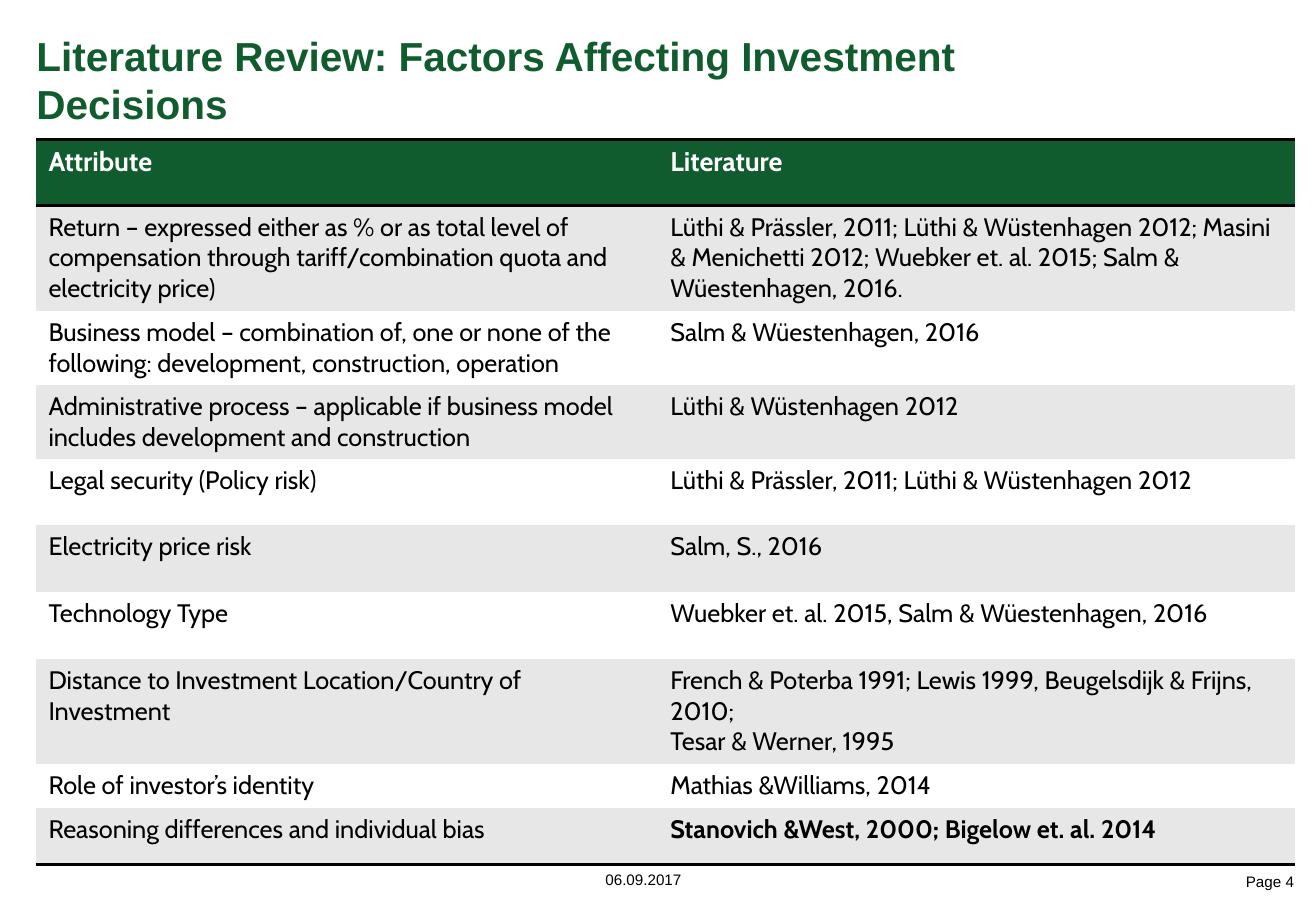
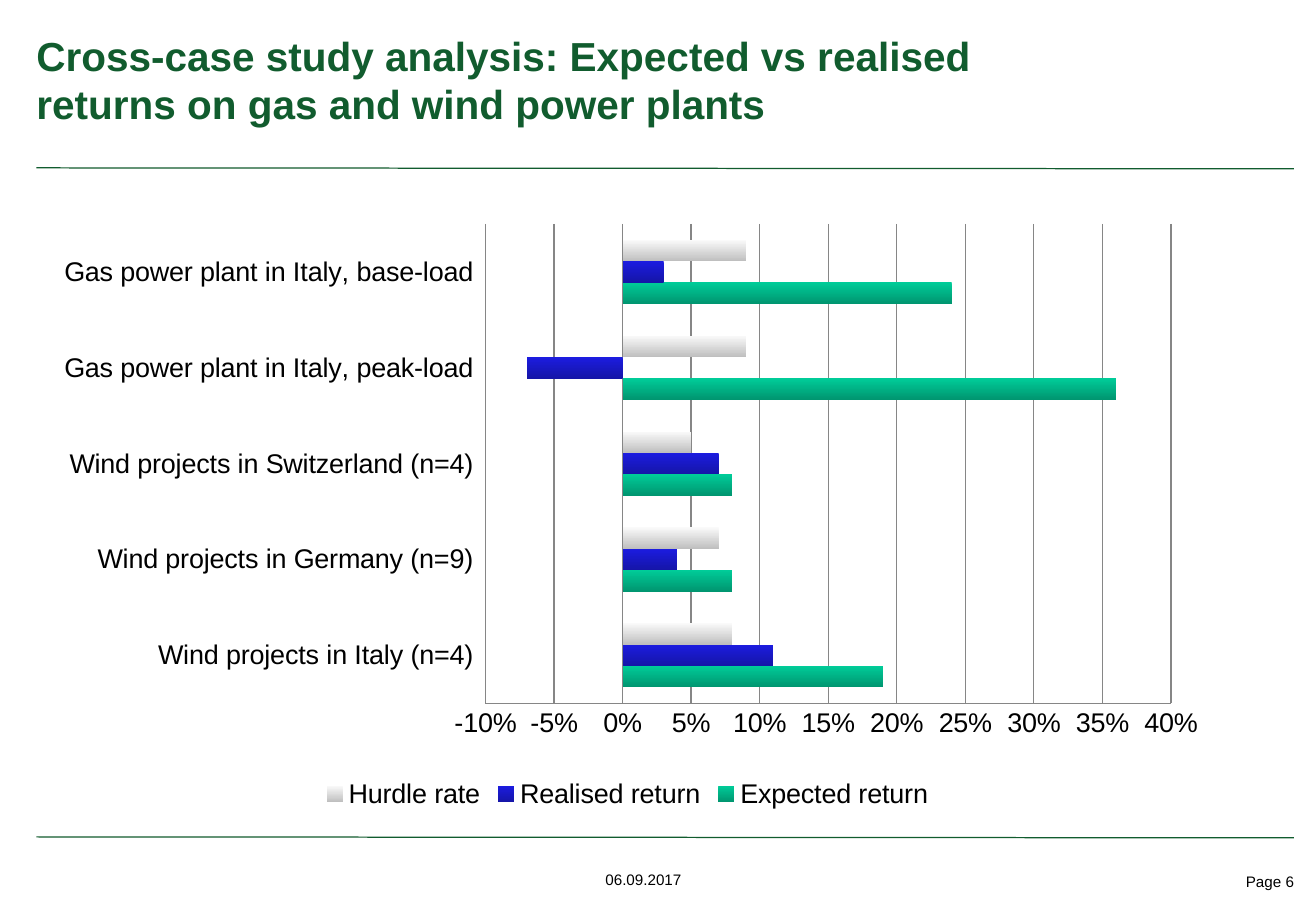
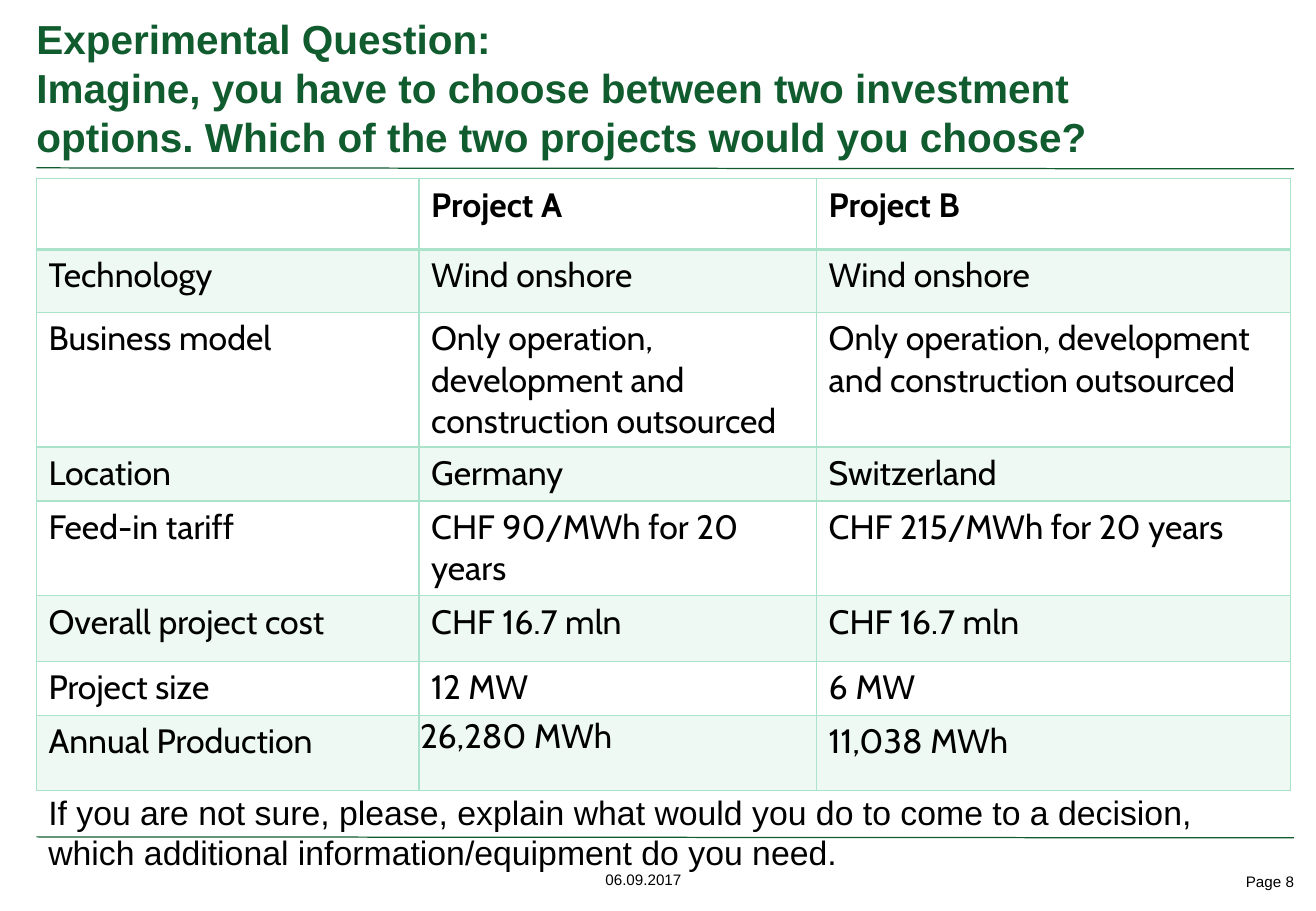
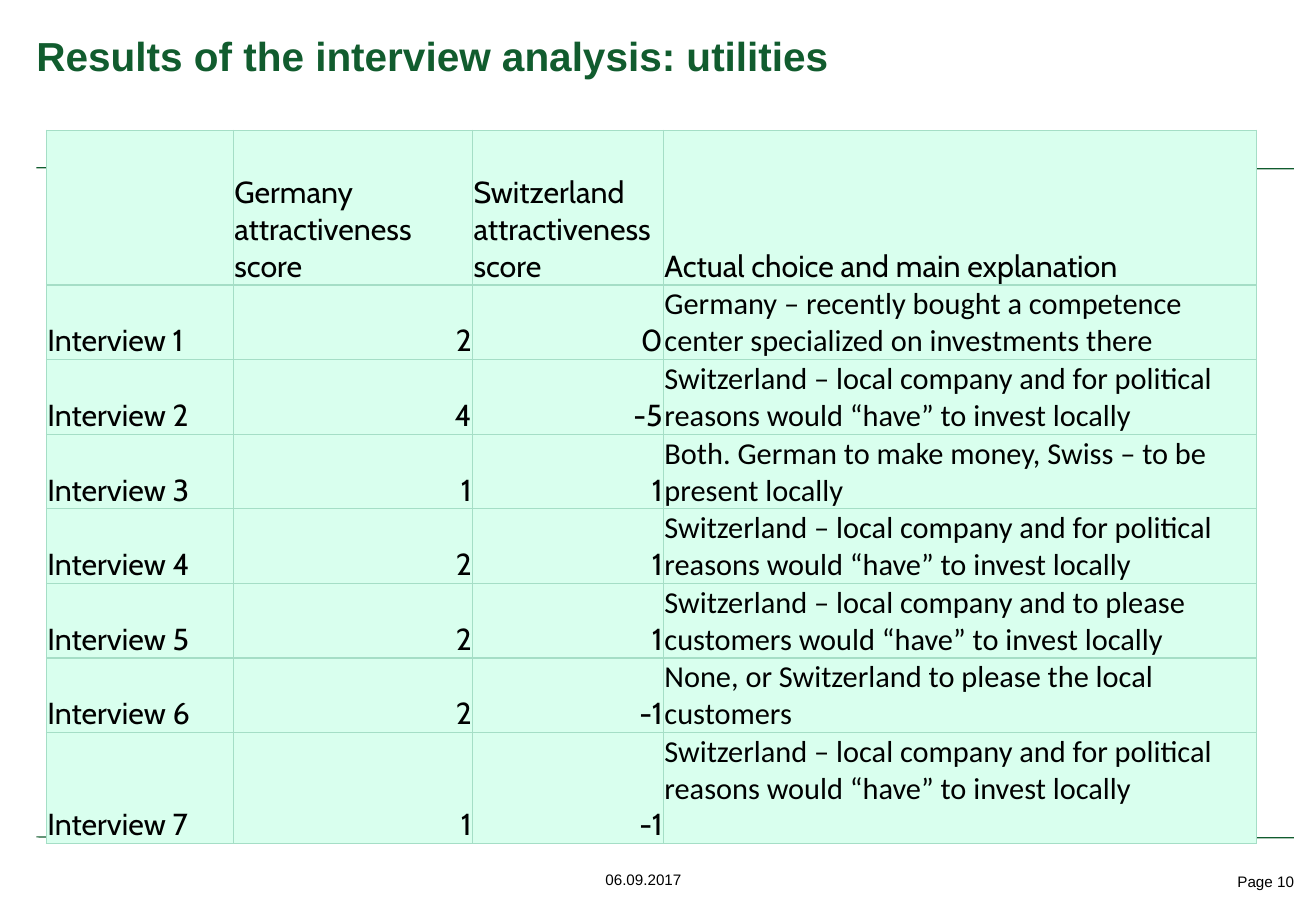
"""Build four slides on factors and returns in energy investment decisions."""
from lxml import etree
from pptx import Presentation
from pptx import util as u
from pptx.chart import data
from pptx.dml import color as dml
from pptx.enum import chart as charts, shapes, text
from pptx.oxml import ns

COLORS = {
    "green": "115C2E", "black": "000000", "white": "FFFFFF", "band": "E7E7E7",
    "mint": "AAE2CA", "pale": "D9FFEE", "rule": "A5DEC6", "grid": "868686",
}
PLAIN_TABLE = "{2D5ABB26-0587-4C30-8999-92F81FD0307C}"
Cm = u.Cm


def write(paragraph, words, size, font="Arial", color="black", bold=False):
    for index, line in enumerate(words.split("\n")):
        if index:
            paragraph.add_line_break()
        run = paragraph.add_run()
        run.text = line
        run.font.size = u.Pt(size)
        run.font.name = font
        run.font.bold = bold
        run.font.color.rgb = dml.RGBColor.from_string(COLORS[color])


def paint(cell, fill, borders, margins=None):
    properties = cell._tc.get_or_add_tcPr()
    for side in "LRTB":
        if side in borders:
            color, width = borders[side]
            line = etree.SubElement(properties, ns.qn("a:ln" + side), w=str(u.Pt(width)))
            solid = etree.SubElement(line, ns.qn("a:solidFill"))
            etree.SubElement(solid, ns.qn("a:srgbClr"), val=COLORS[color])
    if fill:
        cell.fill.solid()
        cell.fill.fore_color.rgb = dml.RGBColor.from_string(COLORS[fill])
    else:
        cell.fill.background()
    if margins is not None:
        cell.margin_left = cell.margin_top = cell.margin_right = Cm(margins)
        cell.margin_bottom = 0


presentation = Presentation()
presentation.slide_width = Cm(27.51)
presentation.slide_height = Cm(19.05)
layout = presentation.slide_layouts[5]
for placeholder in list(layout.placeholders):
    if placeholder.placeholder_format.idx:
        placeholder.element.getparent().remove(placeholder.element)
    else:
        placeholder.left, placeholder.top = Cm(0.76), Cm(0.64)
        placeholder.width, placeholder.height = Cm(21.89), Cm(2.29)

slides = []
for page, title in [
    (4, "Literature Review: Factors Affecting Investment Decisions"),
    (6, "Cross-case study analysis: Expected vs realised returns on gas and wind power plants"),
    (8, "Experimental Question:\nImagine, you have to choose between two investment options. "
        "Which of the two projects would you choose?"),
    (10, "Results of the interview analysis: utilities"),
]:
    slide = presentation.slides.add_slide(layout)
    slides.append(slide)
    if page == 4:
        for y in (3.51, 17.5):
            line = slide.shapes.add_connector(
                shapes.MSO_CONNECTOR.STRAIGHT, Cm(0.76), Cm(y), Cm(27.05), Cm(y + 0.02))
            line.line.color.rgb = dml.RGBColor.from_string(COLORS["green"])
            line.line.width = u.Pt(0.75)
            etree.SubElement(line.element.spPr, ns.qn("a:effectLst"))
            layout.shapes.element.append(line.element)
        date = slide.shapes.add_textbox(Cm(10.49), Cm(17.88), Cm(5.92), Cm(1.02))
        date.text_frame.word_wrap = True
        date.text_frame.vertical_anchor = text.MSO_ANCHOR.MIDDLE
        date.text_frame.paragraphs[0].alignment = text.PP_ALIGN.CENTER
        write(date.text_frame.paragraphs[0], "06.09.2017", 9)
        layout.shapes.element.append(date.element)
    number = slide.shapes.add_textbox(Cm(23.72), Cm(18.24), Cm(3.33), Cm(0.38))
    number.text_frame.word_wrap = True
    number.text_frame.paragraphs[0].alignment = text.PP_ALIGN.RIGHT
    write(number.text_frame.paragraphs[0], f"Page {page}", 9)
    heading = slide.shapes.title.text_frame
    heading.auto_size = text.MSO_AUTO_SIZE.NONE
    heading.vertical_anchor = text.MSO_ANCHOR.TOP
    heading.paragraphs[0].alignment = text.PP_ALIGN.LEFT
    write(heading.paragraphs[0], title, 24, color="green", bold=True)
    for frame in (number.text_frame, heading):
        frame.margin_left = frame.margin_top = frame.margin_right = frame.margin_bottom = 0

literature_slide, returns_slide, question_slide, interview_slide = slides
question_title = question_slide.shapes.title
question_title.left, question_title.top = Cm(0.76), Cm(0.3)
question_title.width, question_title.height = Cm(22.5), Cm(3.18)

tables = []
for slide, left, top, widths, heights in [
    (literature_slide, 0.76, 2.92, [13, 13.31],
     [1.38, 2.2, 1.55, 1.55, 1.38, 1.4, 1.4, 2.2, 0.92, 1.19]),
    (question_slide, 0.76, 3.73, [8, 8.31, 9.91],
     [1.48, 1.32, 2.82, 1.13, 1.97, 1.38, 1.13, 1.57]),
    (interview_slide, 0.97, 2.72, [3.91, 5, 3.99, 12.4], [3.24] + [1.56] * 6 + [2.32]),
]:
    table = slide.shapes.add_table(
        len(heights), len(widths), Cm(left), Cm(top), Cm(sum(widths)), Cm(sum(heights))).table
    table.first_row = table.horz_banding = False
    table._tbl.tblPr.find(ns.qn("a:tableStyleId")).text = PLAIN_TABLE
    for column, width in zip(table.columns, widths):
        column.width = Cm(width)
    for row, height in zip(table.rows, heights):
        row.height = Cm(height)
    tables.append(table)
literature_table, question_table, interview_table = tables

literature = [
    ("Attribute", "Literature"),
    ("Return – expressed either as % or as total level of compensation through "
     "tariff/combination quota and electricity price)",
     "Lüthi & Prässler, 2011; Lüthi & Wüstenhagen 2012; Masini & Menichetti 2012; "
     "Wuebker et. al. 2015; Salm & Wüestenhagen, 2016."),
    ("Business model – combination of, one or none of the following: development, "
     "construction, operation", "Salm & Wüestenhagen, 2016"),
    ("Administrative process – applicable if business model includes development and "
     "construction", "Lüthi & Wüstenhagen 2012"),
    ("Legal security (Policy risk)", "Lüthi & Prässler, 2011; Lüthi & Wüstenhagen 2012"),
    ("Electricity price risk", "Salm, S., 2016"),
    ("Technology Type", "Wuebker et. al. 2015, Salm & Wüestenhagen, 2016"),
    ("Distance to Investment Location/Country of Investment",
     "French & Poterba 1991; Lewis 1999, Beugelsdijk & Frijns, 2010;\nTesar & Werner, 1995"),
    ("Role of investor’s identity", "Mathias &Williams, 2014"),
    ("Reasoning differences and individual bias",
     "Stanovich &West, 2000; Bigelow et. al. 2014"),
]
last = len(literature) - 1
for r, entries in enumerate(literature):
    for c, entry in enumerate(entries):
        cell = literature_table.cell(r, c)
        edges = {0: "TB", last: "B"}.get(r, "")
        fill = "green" if r == 0 else "band" if r % 2 else "white"
        paint(cell, fill, {side: ("black", 2) for side in edges})
        write(cell.text_frame.paragraphs[0], entry, 15 if r else 16, "Cabin",
              "black" if r else "white", r == 0 or (r, c) == (last, 1))

chart_data = data.CategoryChartData(number_format="0%")
chart_data.categories = [
    "Wind projects in Italy (n=4)", "Wind projects in Germany (n=9)",
    "Wind projects in Switzerland (n=4)", "Gas power plant in Italy, peak-load",
    "Gas power plant in Italy, base-load",
]
chart_data.add_series("Expected return", [0.19, 0.08, 0.08, 0.36, 0.24])
chart_data.add_series("Realised return", [0.11, 0.04, 0.07, -0.07, 0.03])
chart_data.add_series("Hurdle rate", [0.08, 0.07, 0.05, 0.09, 0.09])
chart = returns_slide.shapes.add_chart(
    charts.XL_CHART_TYPE.BAR_CLUSTERED, Cm(0.76), Cm(4.17), Cm(24.71), Cm(12.85),
    chart_data).chart
chart.has_title = False
chart.font.size = u.Pt(16)
chart.font.name = "Arial"
chart.font.color.rgb = dml.RGBColor.from_string(COLORS["black"])
chart.has_legend = True
chart.legend.position = charts.XL_LEGEND_POSITION.BOTTOM
chart.legend.include_in_layout = False
plot = chart.plots[0]
plot.gap_width = 150
plot.overlap = 0
plot.vary_by_categories = False
gradients = [("00CC99", "009670"), ("1C1CE0", "1515A8"), ("FAFAFA", "BFBFBF")]
for series, gradient in zip(plot.series, gradients):
    series.invert_if_negative = False
    series.format.fill.gradient()
    series.format.fill.gradient_angle = 270
    for stop, shade in zip(series.format.fill.gradient_stops, gradient):
        stop.color.rgb = dml.RGBColor.from_string(shade)
category_axis, value_axis = chart.category_axis, chart.value_axis
category_axis.tick_label_position = charts.XL_TICK_LABEL_POSITION.LOW
value_axis.minimum_scale, value_axis.maximum_scale = -0.1, 0.4
value_axis.major_unit = 0.05
value_axis.has_major_gridlines = True
value_axis.tick_labels.number_format = "0%"
value_axis.tick_labels.number_format_is_linked = False
for axis in (category_axis, value_axis):
    axis.major_tick_mark = axis.minor_tick_mark = charts.XL_TICK_MARK.NONE
for part in (category_axis, value_axis, value_axis.major_gridlines):
    part.format.line.color.rgb = dml.RGBColor.from_string(COLORS["grid"])
    part.format.line.width = u.Pt(0.75)
plot_area = chart._chartSpace.chart.plotArea
for old in plot_area.findall(ns.qn("c:layout")):
    plot_area.remove(old)
plot_layout = etree.Element(ns.qn("c:layout"))
manual = etree.SubElement(plot_layout, ns.qn("c:manualLayout"))
for tag, value in [("layoutTarget", "inner"), ("xMode", "edge"), ("yMode", "edge"),
                   ("x", "0.38"), ("y", "0.04"), ("w", "0.58"), ("h", "0.78")]:
    etree.SubElement(manual, ns.qn("c:" + tag), val=value)
plot_area.insert(0, plot_layout)

question = [
    ("", "Project A", "Project B"),
    ("Technology", "Wind onshore", "Wind onshore"),
    ("Business model", "Only operation, development and construction outsourced",
     "Only operation, development and construction outsourced"),
    ("Location", "Germany", "Switzerland"),
    ("Feed-in tariff", "CHF 90/MWh for 20 years", "CHF 215/MWh for 20 years"),
    ("Overall project cost", "CHF 16.7 mln", "CHF 16.7 mln"),
    ("Project size", "12 MW", "6 MW"),
    ("Annual Production", "26,280 MWh", "11,038 MWh"),
]
for r, entries in enumerate(question):
    for c, entry in enumerate(entries):
        cell = question_table.cell(r, c)
        borders = {side: ("mint", 2 if (r, side) in [(0, "B"), (1, "T")] else 1)
                   for side in "LRTB"}
        paint(cell, "mint" if r % 2 else None, borders, 0.02 if (r, c) == (7, 1) else None)
        for tint in cell._tc.tcPr.findall(ns.qn("a:solidFill") + "/" + ns.qn("a:srgbClr")):
            etree.SubElement(tint, ns.qn("a:alpha"), val="20000")
        if entry:
            write(cell.text_frame.paragraphs[0], entry, 20, "Cabin", bold=r == 0)

note = question_slide.shapes.add_textbox(Cm(0.76), Cm(16.43), Cm(26.21), Cm(1.96))
note.text_frame.word_wrap = True
write(note.text_frame.paragraphs[0],
      "If you are not sure, please, explain what would you do to come to a decision, "
      "which additional information/equipment do you need.", 20)

political = ("Switzerland – local company and for political reasons "
             "would “have” to invest locally")
interviews = [
    ("2", "0", "Germany – recently bought a competence center specialized on investments there"),
    ("4", "-5", political),
    ("1", "1", "Both. German to make money, Swiss – to be present locally"),
    ("2", "1", political),
    ("2", "1", "Switzerland – local company and to please customers "
               "would “have” to invest locally"),
    ("2", "-1", "None, or Switzerland to please the local customers"),
    ("1", "-1", political),
]
header = ("", "Germany attractiveness score", "Switzerland attractiveness score",
          "Actual choice and main explanation")
rows = [header] + [(f"Interview {n}", *answers) for n, answers in enumerate(interviews, 1)]
for r, entries in enumerate(rows):
    for c, entry in enumerate(entries):
        cell = interview_table.cell(r, c)
        paint(cell, "pale", {side: ("rule", 0.75) for side in "LRTB"}, 0.02)
        top_aligned = (r, c) == (len(interviews), 3)
        cell.vertical_anchor = text.MSO_ANCHOR.TOP if top_aligned else text.MSO_ANCHOR.BOTTOM
        paragraph = cell.text_frame.paragraphs[0]
        if r and c in (1, 2):
            paragraph.alignment = text.PP_ALIGN.RIGHT
        if entry:
            write(paragraph, entry, 18, "Calibri" if r and c == 3 else "Cabin")

presentation.save("out.pptx")
